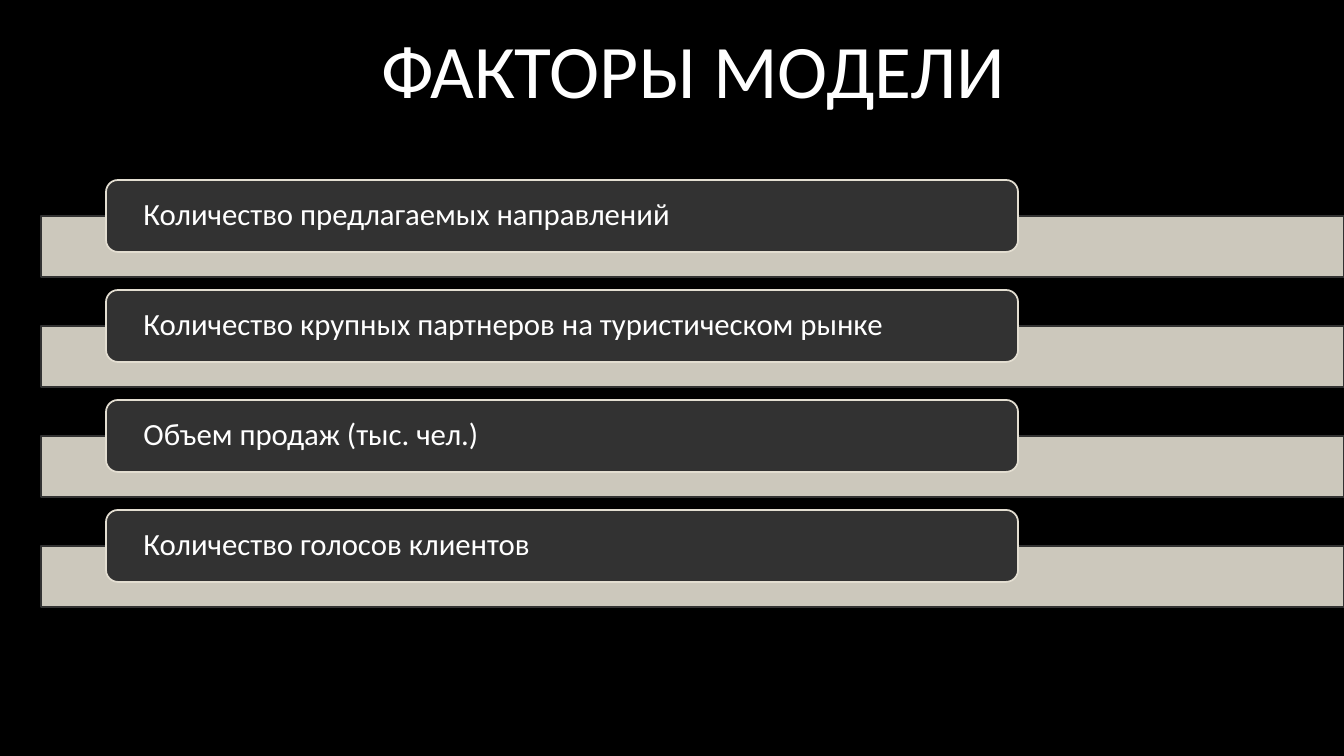
from lxml.etree import SubElement
from pptx import Presentation
from pptx.dml.color import RGBColor
from pptx.enum.shapes import MSO_SHAPE as SHAPE
from pptx.enum.text import MSO_ANCHOR as ANCHOR, PP_ALIGN as ALIGN
from pptx.oxml.ns import qn
from pptx.util import Pt

PX = 914400 / 100.8
SLIDE_W, SLIDE_H = 1344, 756

BLACK = RGBColor(0x00, 0x00, 0x00)
WHITE = RGBColor(0xFF, 0xFF, 0xFF)
CHARCOAL = RGBColor(0x32, 0x32, 0x32)
SAND = RGBColor(0xE3, 0xDE, 0xD1)

TITLE = "ФАКТОРЫ МОДЕЛИ"
FACTORS = [
    "Количество предлагаемых направлений",
    "Количество крупных партнеров на туристическом рынке",
    "Объем продаж (тыс. чел.)",
    "Количество голосов клиентов",
]


def px(value):
    return round(value * PX)


def write(frame, text, size, align=ALIGN.LEFT, anchor=ANCHOR.TOP,
          wrap=True, side=10, top=5, spacing=1.0):
    frame.word_wrap = wrap
    frame.vertical_anchor = anchor
    frame.margin_left = frame.margin_right = px(side)
    frame.margin_top = frame.margin_bottom = px(top)
    line = frame.paragraphs[0]
    line.alignment = align
    line.line_spacing = spacing
    run = line.add_run()
    run.text = text
    run.font.name = "Calibri"
    run.font.size = Pt(size)
    run.font.color.rgb = WHITE


def add_panel(slide, kind, box, fill, outline, opacity=100):
    panel = slide.shapes.add_shape(kind, *map(px, box))
    panel.shadow.inherit = False
    panel.fill.solid()
    panel.fill.fore_color.rgb = fill
    panel.line.color.rgb = outline
    panel.line.width = Pt(1.25)
    if opacity < 100:
        color = panel.fill._xPr.find(".//" + qn("a:srgbClr"))
        SubElement(color, qn("a:alpha"), val=str(opacity * 1000))
    return panel


def add_title(slide, box):
    title = slide.shapes.add_textbox(*map(px, box))
    write(title.text_frame, TITLE, 54, align=ALIGN.CENTER, wrap=False)


def add_factor(slide, box, text):
    left, top, width, height = box
    bar_height, label_height = 61, 72
    # Translucent bar at the bottom of the row
    add_panel(slide, SHAPE.RECTANGLE,
              (left, top + height - bar_height, width, bar_height),
              SAND, CHARCOAL, opacity=90)
    # Label overlapping the bar
    label = add_panel(slide, SHAPE.ROUNDED_RECTANGLE,
                      (left + 65, top, width * 0.7, label_height),
                      CHARCOAL, SAND)
    write(label.text_frame, text, 22, anchor=ANCHOR.MIDDLE,
          side=34, top=0, spacing=0.9)


def add_factor_list(slide, box):
    left, top, width, height = box
    gap = 13
    row_height = (height - gap * (len(FACTORS) - 1)) / len(FACTORS)
    for index, text in enumerate(FACTORS):
        row_top = top + index * (row_height + gap)
        add_factor(slide, (left, row_top, width, row_height), text)


def main():
    deck = Presentation()
    deck.slide_width, deck.slide_height = px(SLIDE_W), px(SLIDE_H)
    slide = deck.slides.add_slide(deck.slide_layouts[6])
    slide.background.fill.solid()
    slide.background.fill.fore_color.rgb = BLACK
    add_factor_list(slide, (41, 180, SLIDE_W - 41, 427))
    add_title(slide, (342, 18, 703, 102))
    deck.save("out.pptx")


if __name__ == "__main__":
    main()
